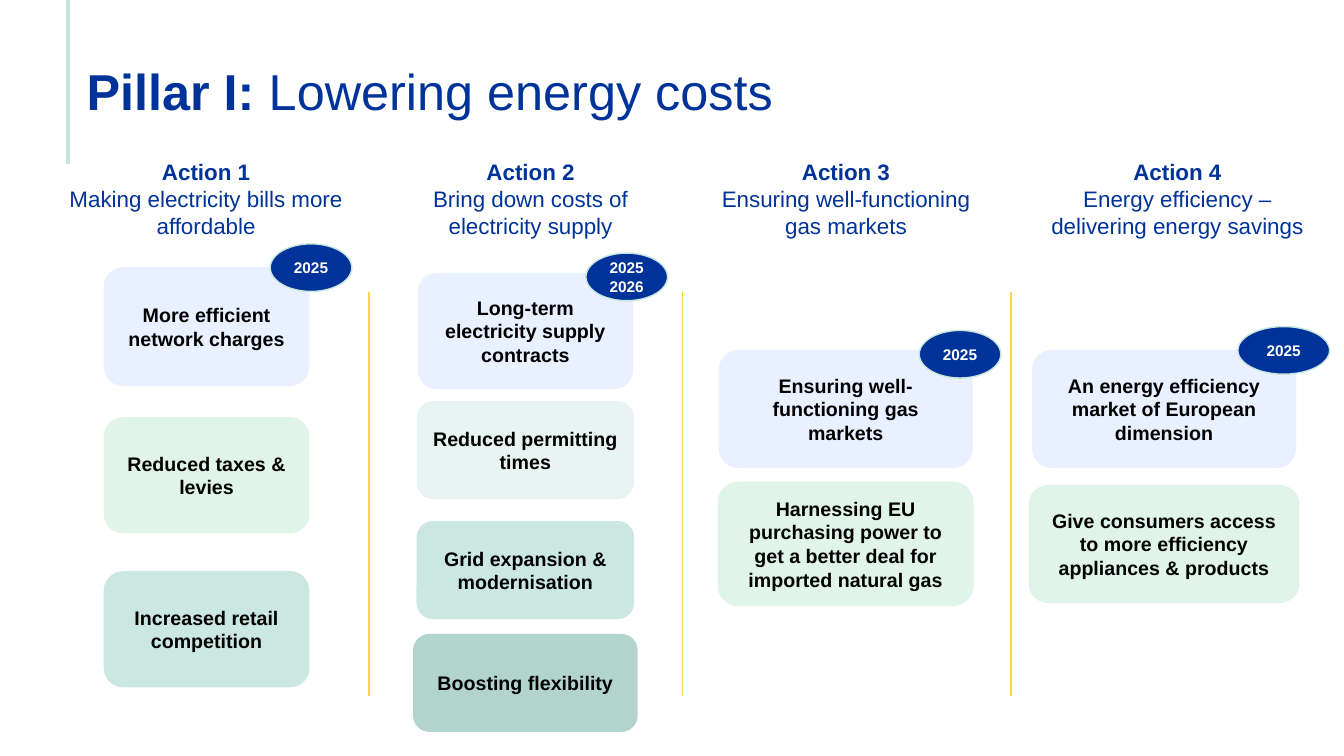
from lxml import etree
from pptx import Presentation
from pptx import util as u
from pptx.dml.color import RGBColor
from pptx.enum import shapes, text
from pptx.oxml.ns import qn

NAVY = RGBColor(0x00, 0x33, 0x99)
BLUE = RGBColor(0xB8, 0xCF, 0xFF)
GREEN = RGBColor(0xB4, 0xE4, 0xCB)
MINT = RGBColor(0xC6, 0xE5, 0xDF)
TEAL = RGBColor(0x7D, 0xC4, 0xB6)
DEEP = RGBColor(0x43, 0x93, 0x83)
GOLD = RGBColor(0xFF, 0xD3, 0x4E)
BLACK = RGBColor(0, 0, 0)
WHITE = RGBColor(0xFF, 0xFF, 0xFF)

# Heading: middle, width, lines. Cards: top, width, height, tone, words.
# Badge: left, top, width, lines.
ACTIONS = [
    dict(head=(147.2, 231, "Action 1\nMaking electricity bills more affordable"),
         mid=147.6,
         cards=[(190.8, 147, 85, BLUE, "More efficient network charges"),
                (298, 147, 83, GREEN, "Reduced taxes & levies"),
                (408, 147, 83, TEAL, "Increased retail competition")],
         badge=(193, 174.2, 58.3, "2025")),
    dict(head=(379, 224, "Action 2\nBring down costs of electricity supply"),
         mid=375.3,
         cards=[(195, 154, 83, BLUE, "Long-term electricity supply contracts"),
                (286.5, 155, 70, MINT, "Reduced permitting times"),
                (372.2, 155.5, 70, TEAL, "Grid expansion & modernisation"),
                (452.8, 160.5, 70, DEEP, "Boosting flexibility")],
         badge=(418.5, 180.8, 58.3, "2025\n2026")),
    dict(head=(604.3, 208, "Action 3\nEnsuring well-functioning gas markets"),
         mid=604.1,
         cards=[(250, 181.5, 84.4, BLUE, "Ensuring well-functioning gas markets"),
                (344, 183, 89, GREEN, "Harnessing EU purchasing power to get "
                 "a better deal for imported natural gas")],
         badge=(656.6, 236, 58.3, "2025")),
    dict(head=(841, 217.5, "Action 4\nEnergy efficiency – delivering energy savings"),
         mid=831.5,
         cards=[(250, 188.6, 84.4, BLUE, "An energy efficiency market of European dimension"),
                (346.4, 193.5, 84.4, GREEN, "Give consumers access to more "
                 "efficiency appliances & products")],
         badge=(884.2, 233.3, 65.5, "2025")),
]
RULES = [263.5, 487.4, 722.2]


class Deck:
    """Holds the style and the current slide."""

    font = "Arial"

    def __init__(self):
        self.prs = Presentation()
        self.prs.slide_width = u.Pt(960)
        self.prs.slide_height = u.Pt(540)
        self.slide = self.prs.slides.add_slide(self.prs.slide_layouts[5])

    def style(self, run, size, color, bold=True):
        run.font.name = self.font
        run.font.size = u.Pt(size)
        run.font.bold = bold
        run.font.color.rgb = color

    def label(self, frame, words, size, color):
        frame.word_wrap = True
        frame.text = words
        for par in frame.paragraphs:
            par.alignment = text.PP_ALIGN.CENTER
            for run in par.runs:
                self.style(run, size, color)

    def title(self, lead, rest):
        box = self.slide.shapes.title
        box.left, box.top, box.width, box.height = map(u.Pt, (54.7, 46, 828, 64))
        frame = box.text_frame
        frame.word_wrap = True
        frame.auto_size = text.MSO_AUTO_SIZE.NONE
        frame.vertical_anchor = text.MSO_ANCHOR.TOP
        frame.margin_top = u.Pt(2)
        par = frame.paragraphs[0]
        par.alignment = text.PP_ALIGN.LEFT
        par.line_spacing = 0.9
        for words, bold in ((lead, True), (rest, False)):
            run = par.add_run()
            run.text = words
            self.style(run, 36, NAVY, bold)

    def line(self, x, top, end, color, width):
        line = self.slide.shapes.add_connector(
            shapes.MSO_CONNECTOR.STRAIGHT, u.Pt(x), u.Pt(top), u.Pt(x), u.Pt(end))
        line.line.color.rgb = color
        line.line.width = u.Pt(width)
        etree.SubElement(line.element.spPr, qn("a:effectLst"))

    def head(self, mid, width, words):
        box = self.slide.shapes.add_textbox(
            u.Pt(mid - width / 2), u.Pt(109.4), u.Pt(width), u.Pt(65.5))
        frame = box.text_frame
        self.label(frame, words, 16, NAVY)
        frame.auto_size = text.MSO_AUTO_SIZE.SHAPE_TO_FIT_TEXT
        frame.paragraphs[1].runs[0].font.bold = False

    def shape(self, kind, left, top, width, height, fill):
        item = self.slide.shapes.add_shape(kind, *map(u.Pt, (left, top, width, height)))
        item.shadow.inherit = False
        item.fill.solid()
        item.fill.fore_color.rgb = fill
        item.text_frame.vertical_anchor = text.MSO_ANCHOR.MIDDLE
        return item

    def card(self, mid, top, width, height, tone, words):
        item = self.shape(shapes.MSO_SHAPE.ROUNDED_RECTANGLE,
                          mid - width / 2, top, width, height, tone)
        item.line.fill.background()
        # Opacity of the tint
        color = item.element.spPr.find(qn("a:solidFill"))[0]
        alpha = etree.SubElement(color, qn("a:alpha"))
        alpha.set("val", "30000" if tone == BLUE else "40000")
        self.label(item.text_frame, words, 14, BLACK)

    def badge(self, left, top, width, words):
        item = self.shape(shapes.MSO_SHAPE.OVAL, left, top, width, 34, NAVY)
        item.line.color.rgb = MINT
        item.line.width = u.Pt(1)
        self.label(item.text_frame, words, 11, WHITE)


def main():
    deck = Deck()

    # Title and accent bar
    deck.title("Pillar I: ", "Lowering energy costs")
    deck.line(48.5, 0, 117.5, MINT, 3)

    # Column rules
    for x in RULES:
        deck.line(x, 208.8, 497.5, GOLD, 1)

    # Actions with their cards and years
    for act in ACTIONS:
        deck.head(*act["head"])
        for card in act["cards"]:
            deck.card(act["mid"], *card)
        deck.badge(*act["badge"])

    deck.prs.save("out.pptx")


if __name__ == "__main__":
    main()
